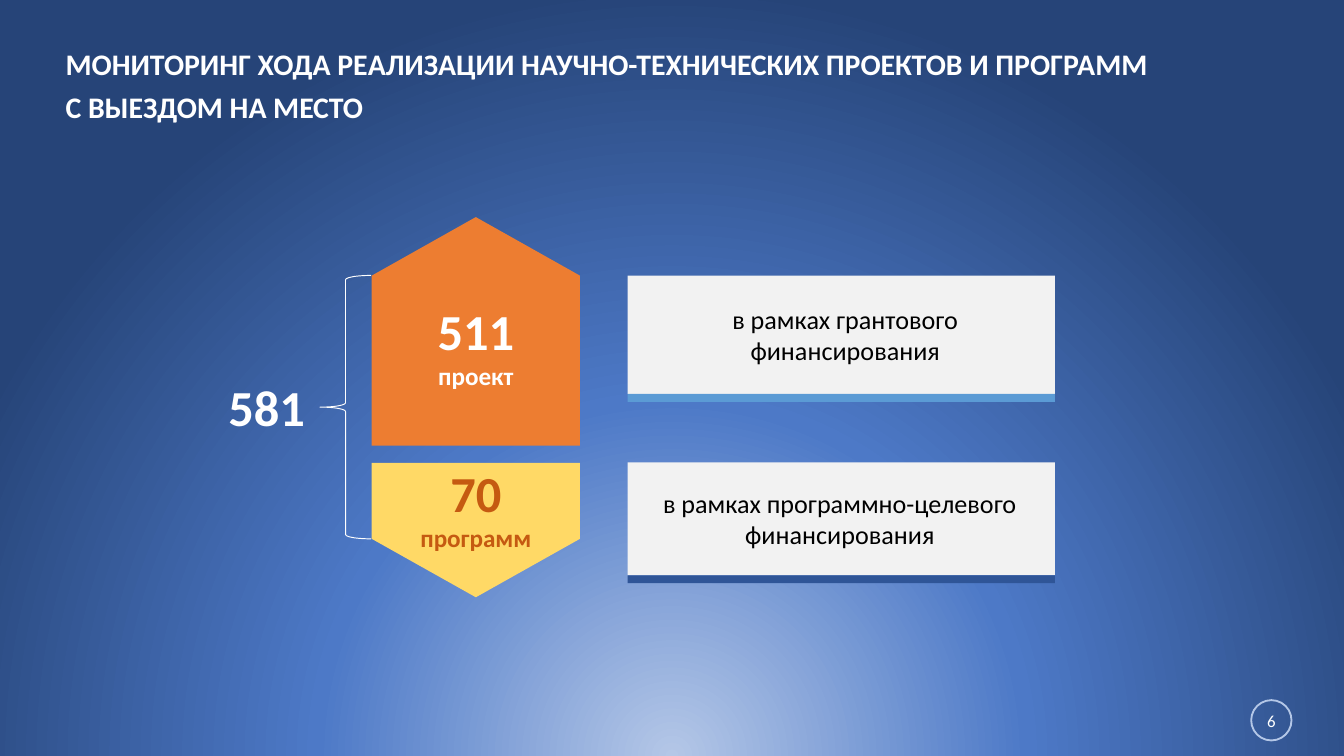
from lxml import etree
from pptx import Presentation
from pptx.dml.color import RGBColor
from pptx.enum import shapes, text
from pptx.oxml import ns
from pptx.util import Pt

# Content
TITLE = ["МОНИТОРИНГ ХОДА РЕАЛИЗАЦИИ НАУЧНО-ТЕХНИЧЕСКИХ ПРОЕКТОВ И ПРОГРАММ",
         "С ВЫЕЗДОМ НА МЕСТО"]
TOTAL = "581"
PAGE = "6"
# Vertical measures are in points; rotation turns the arrow's tip up or down
ARROWS = [
    dict(count="511", unit="проект", top=116.3, length=122.4, rotation=270,
         tip=0.281, fill="orange", color="white", text_top=157),
    dict(count="70", unit="программ", top=248, length=72, rotation=90,
         tip=0.435, fill="yellow", color="rust", text_top=244),
]
CARDS = [
    dict(label="в рамках грантового финансирования", top=147.6, height=63.4,
         stripe="sky", text_left=341.3),
    dict(label="в рамках программно-целевого финансирования", top=247.7, height=60.5,
         stripe="navy", text_left=338.4),
]

THEME = dict(
    font="Calibri",
    colors=dict(white="FFFFFF", black="000000", orange="ED7D31", yellow="FFD966",
                rust="C55A11", card="F2F2F2", sky="5B9BD5", navy="2F5597",
                ring="B4C7E7"),
    gradient=[(0, "B4C7E7"), (46, "4D79C7"), (100, "264478")],
    sizes=dict(title=16, number=27, unit=13.5, label=14, page=9),
)

# Layout
ARROW_CENTER, ARROW_BREADTH = 254.9, 111.6
ARROW_TEXT_WIDTH, ARROW_TEXT_HEIGHT = 109.4, 56.2
CARD_LEFT, CARD_WIDTH, STRIPE_HEIGHT = 336.2, 229, 4.3
LABEL_WIDTH, LABEL_HEIGHT = 223.2, 41

SHAPE = shapes.MSO_SHAPE
CENTER = text.PP_ALIGN.CENTER


def color(name):
    return RGBColor.from_string(THEME["colors"][name])


def paint_background(slide):
    slide.background.fill.gradient()
    gradient = slide.background._cSld.find(".//" + ns.qn("a:gradFill"))
    for child in list(gradient):
        gradient.remove(child)
    stops = etree.SubElement(gradient, ns.qn("a:gsLst"))
    for position, value in THEME["gradient"]:
        stop = etree.SubElement(stops, ns.qn("a:gs"), pos=str(position * 1000))
        etree.SubElement(stop, ns.qn("a:srgbClr"), val=value)
    circle = etree.SubElement(gradient, ns.qn("a:path"), path="circle")
    etree.SubElement(circle, ns.qn("a:fillToRect"),
                     l="50000", t="130000", r="50000", b="-30000")


def write(shape, lines, color_name, bold=False, align=CENTER, spacing=None,
          anchor=text.MSO_ANCHOR.TOP, margins=(7.2, 3.6)):
    """Fill a shape with lines given as (wording, size name)."""
    frame = shape.text_frame
    frame.word_wrap = True
    frame.auto_size = text.MSO_AUTO_SIZE.NONE
    frame.vertical_anchor = anchor
    frame.margin_left = frame.margin_right = Pt(margins[0])
    frame.margin_top = frame.margin_bottom = Pt(margins[1])
    for index, (wording, size) in enumerate(lines):
        paragraph = frame.paragraphs[0] if index == 0 else frame.add_paragraph()
        paragraph.alignment = align
        paragraph.line_spacing = spacing
        run = paragraph.add_run()
        run.text = wording
        run.font.name = THEME["font"]
        run.font.size = Pt(THEME["sizes"][size])
        run.font.bold = bold
        run.font.color.rgb = color(color_name)


def add_shape(slide, kind, box, fill=None, line=None, line_width=1):
    shape = slide.shapes.add_shape(kind, *map(Pt, box))
    shape.shadow.inherit = False
    if fill:
        shape.fill.solid()
        shape.fill.fore_color.rgb = color(fill)
    else:
        shape.fill.background()
    if line:
        shape.line.color.rgb = color(line)
        shape.line.width = Pt(line_width)
    else:
        shape.line.fill.background()
    return shape


def add_text(slide, box, lines, color_name, **options):
    write(slide.shapes.add_textbox(*map(Pt, box)), lines, color_name, **options)


def add_arrow(slide, arrow):
    length = arrow["length"]
    middle = arrow["top"] + length / 2
    shape = add_shape(slide, SHAPE.PENTAGON,
                      (ARROW_CENTER - length / 2, middle - ARROW_BREADTH / 2,
                       length, ARROW_BREADTH), arrow["fill"])
    shape.rotation = arrow["rotation"]
    shape.adjustments[0] = arrow["tip"]
    add_text(slide, (ARROW_CENTER - ARROW_TEXT_WIDTH / 2, arrow["text_top"],
                     ARROW_TEXT_WIDTH, ARROW_TEXT_HEIGHT),
             [(arrow["count"], "number"), (arrow["unit"], "unit")],
             arrow["color"], bold=True)


def add_card(slide, card):
    top, height = card["top"], card["height"]
    add_shape(slide, SHAPE.RECTANGLE, (CARD_LEFT, top, CARD_WIDTH, height), "card")
    add_shape(slide, SHAPE.RECTANGLE,
              (CARD_LEFT, top + height, CARD_WIDTH, STRIPE_HEIGHT), card["stripe"])
    add_text(slide, (card["text_left"], top + (height - LABEL_HEIGHT) / 2,
                     LABEL_WIDTH, LABEL_HEIGHT), [(card["label"], "label")], "black")


def main():
    presentation = Presentation()
    presentation.slide_width, presentation.slide_height = Pt(720), Pt(405)
    slide = presentation.slides.add_slide(presentation.slide_layouts[5])
    paint_background(slide)

    # Title
    title = slide.shapes.title
    title.left, title.top, title.width, title.height = map(Pt, (30.2, 18, 630, 51.8))
    write(title, [(line, "title") for line in TITLE], "white", bold=True,
          align=text.PP_ALIGN.LEFT, spacing=1.2,
          anchor=text.MSO_ANCHOR.MIDDLE, margins=(5, 2.9))

    # Arrows and cards
    for arrow in ARROWS:
        add_arrow(slide, arrow)
    for card in CARDS:
        add_card(slide, card)

    # Total with its brace
    add_shape(slide, SHAPE.LEFT_BRACE, (171.4, 147.6, 27.4, 141.1),
              line="white", line_width=0.5)
    add_text(slide, (115.2, 198, 63.4, 40.3), [(TOTAL, "number")], "white",
             bold=True, align=text.PP_ALIGN.LEFT)

    # Page number
    badge = add_shape(slide, SHAPE.OVAL, (670.3, 375.1, 21.6, 21.6), line="ring")
    write(badge, [(PAGE, "page")], "white",
          anchor=text.MSO_ANCHOR.MIDDLE, margins=(0, 3.6))

    presentation.save("out.pptx")


if __name__ == "__main__":
    main()
